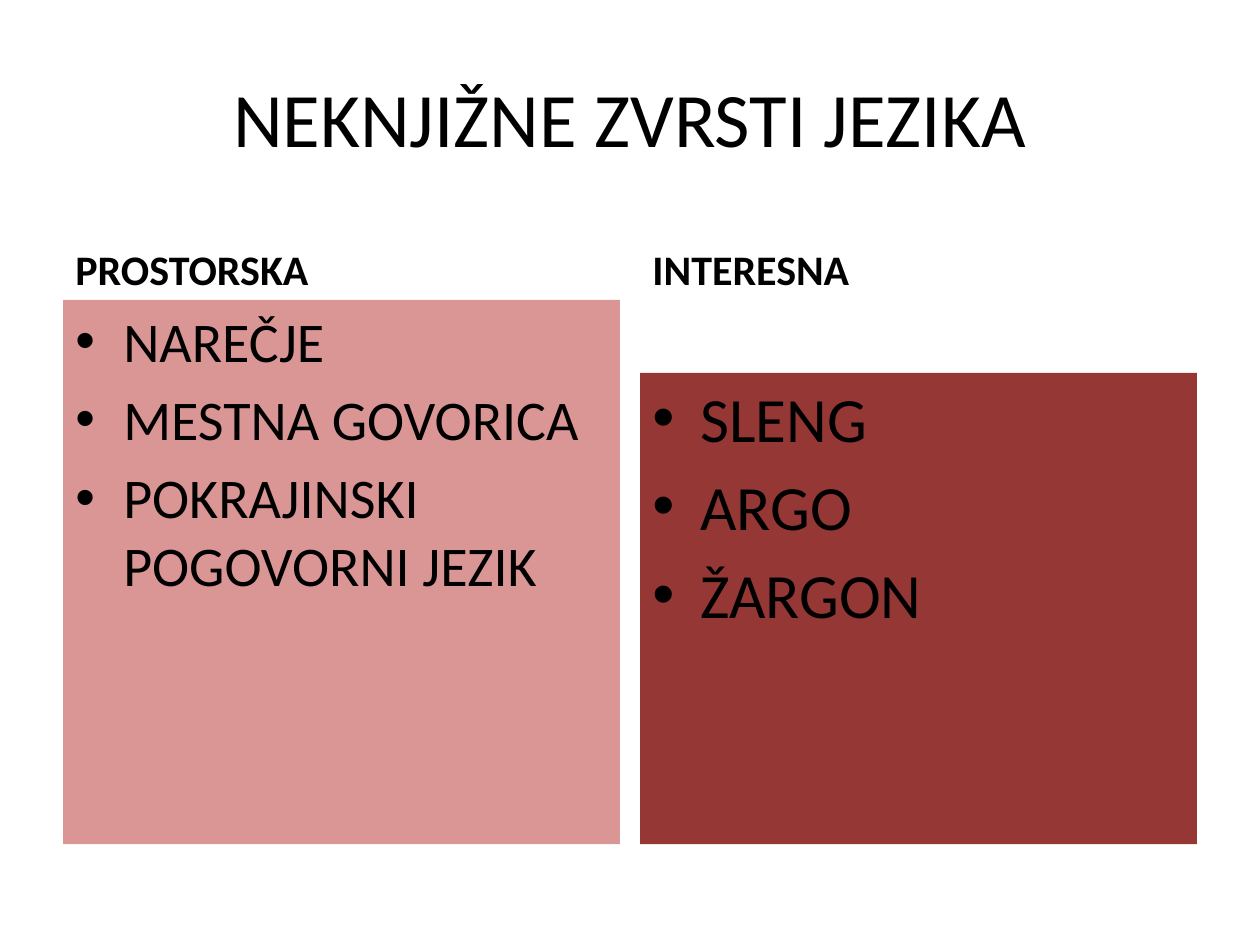
from dataclasses import dataclass
from typing import Optional

from lxml import etree
from pptx import Presentation
from pptx import util as u
from pptx.dml.color import RGBColor
from pptx.enum import shapes, text
from pptx.oxml.ns import qn

BLACK = RGBColor(0x00, 0x00, 0x00)
ROSE = RGBColor(0xD9, 0x96, 0x94)
BRICK = RGBColor(0x95, 0x37, 0x35)

WIDTH, HEIGHT = 10, 7.5
MARGIN, GAP = 0.5, 0.16
CONTENT_W = WIDTH - 2 * MARGIN
COL_W = (CONTENT_W - GAP) / 2
HEADING_TOP, HEADING_H = 1.68, 0.7
PANEL_BOTTOM = 6.7
INDENT = 0.38


@dataclass
class Column:
    """A heading above a coloured panel of bulleted items."""
    heading: str
    items: list[str]
    top: float
    fill: RGBColor
    size: int


COLUMNS = [
    Column("PROSTORSKA", ["NAREČJE", "MESTNA GOVORICA", "POKRAJINSKI POGOVORNI JEZIK"],
           HEADING_TOP + HEADING_H, ROSE, 32),
    Column("INTERESNA", ["SLENG", "ARGO", "ŽARGON"], 2.96, BRICK, 36),
]


def add_bullet(p) -> None:
    """Give a paragraph a hanging round bullet."""
    pPr = p._p.get_or_add_pPr()
    pPr.set("marL", str(u.Inches(INDENT)))
    pPr.set("indent", str(-u.Inches(INDENT)))
    etree.SubElement(pPr, qn("a:buFont")).set("typeface", "Arial")
    etree.SubElement(pPr, qn("a:buChar")).set("char", "•")


def add_text(slide, lines: list[str], left: float, top: float, width: float, height: float, *,
             size: int, bold: bool = False, bullets: bool = False,
             fill: Optional[RGBColor] = None,
             align=text.PP_ALIGN.LEFT, anchor=text.MSO_ANCHOR.TOP) -> None:
    """Add lines of text in a plain box or a filled rectangle."""
    box = [u.Inches(v) for v in (left, top, width, height)]
    if fill is None:
        sp = slide.shapes.add_textbox(*box)
    else:
        sp = slide.shapes.add_shape(shapes.MSO_SHAPE.RECTANGLE, *box)
        sp.shadow.inherit = False
        sp.fill.solid()
        sp.fill.fore_color.rgb = fill
        sp.line.fill.background()
    tf = sp.text_frame
    tf.word_wrap = True
    tf.vertical_anchor = anchor
    for i, line in enumerate(lines):
        p = tf.add_paragraph() if i else tf.paragraphs[0]
        p.alignment = align
        if i:
            p.space_before = u.Pt(size * 0.2)
        if bullets:
            add_bullet(p)
        r = p.add_run()
        r.text = line
        r.font.name = "Calibri"
        r.font.size = u.Pt(size)
        r.font.bold = bold
        r.font.color.rgb = BLACK


def add_column(slide, index: int, col: Column) -> None:
    """Draw one heading and its panel at the given column of the grid."""
    left = MARGIN + index * (COL_W + GAP)
    add_text(slide, [col.heading], left, HEADING_TOP, COL_W, HEADING_H,
             size=24, bold=True, anchor=text.MSO_ANCHOR.BOTTOM)
    add_text(slide, col.items, left, col.top, COL_W, PANEL_BOTTOM - col.top,
             size=col.size, bullets=True, fill=col.fill)


def main() -> None:
    """Build and save the slide."""
    prs = Presentation()
    prs.slide_width, prs.slide_height = u.Inches(WIDTH), u.Inches(HEIGHT)
    s = prs.slides.add_slide(prs.slide_layouts[6])
    add_text(s, ["NEKNJIŽNE ZVRSTI JEZIKA"], MARGIN, 0.3, CONTENT_W, 1.25, size=44,
             align=text.PP_ALIGN.CENTER, anchor=text.MSO_ANCHOR.MIDDLE)
    for i, col in enumerate(COLUMNS):
        add_column(s, i, col)
    prs.save("out.pptx")


if __name__ == "__main__":
    main()
